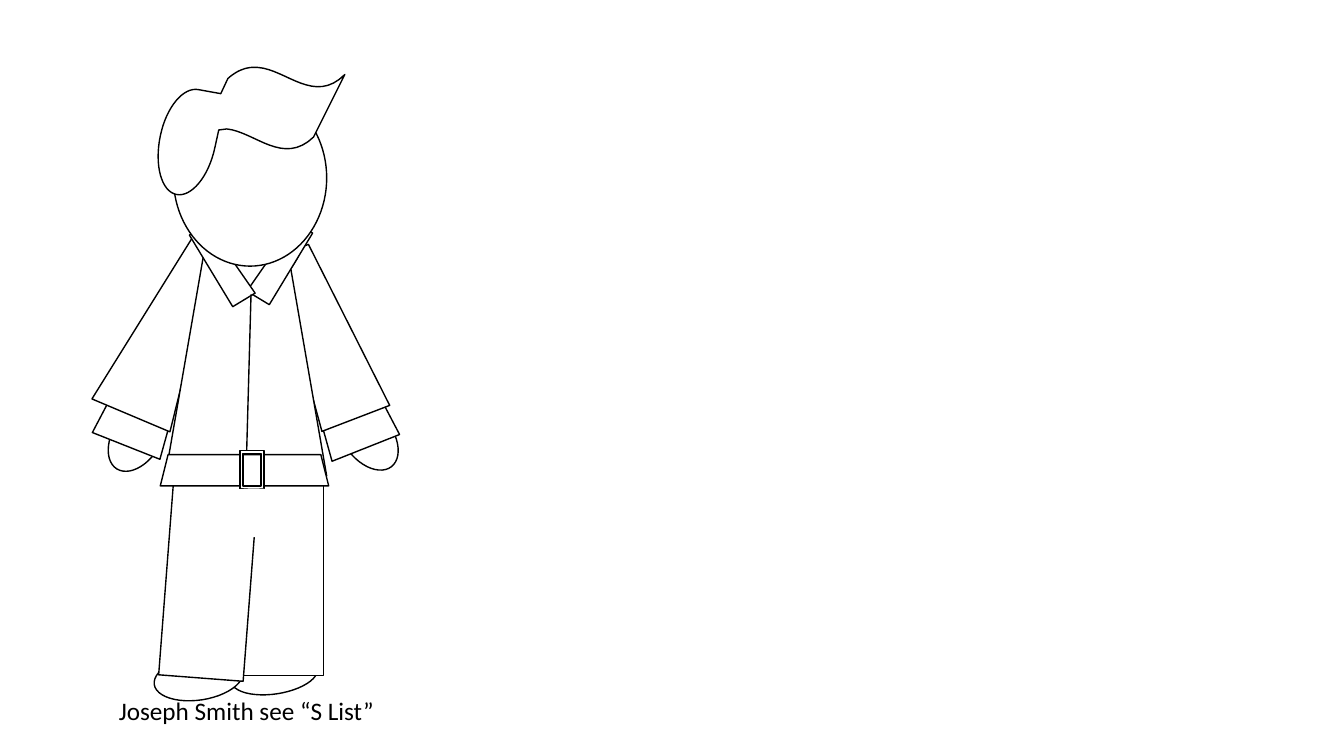
"""Draw an outlined figure with swept hair, shirt, belt and caption."""
from pptx import Presentation
from pptx.dml.color import RGBColor as Rgb
from pptx.enum.shapes import MSO_CONNECTOR as Connector, MSO_SHAPE as Shape
from pptx.oxml.ns import qn
from pptx.util import Pt
from lxml.etree import SubElement

SLIDE = (1333, 750)
PX = 9144
CURVE_STEPS = 16
THEME = {"ink": Rgb(0, 0, 0), "paper": Rgb(255, 255, 255), "outline": Pt(1),
         "font": "Calibri", "caption": Pt(18)}

CAPTION = "Joseph Smith see “S List”"
CAPTION_BOX = (108, 685, 275, 40)

OVAL, TAPER, COLLAR = Shape.OVAL, Shape.TRAPEZOID, Shape.FLOWCHART_MANUAL_INPUT

BODY = [
    ("right hand", OVAL, (341, 395, 48, 76), {"rotation": 322.3}),
    ("left hand", OVAL, (112, 395, 48, 76), {"rotation": 32.2}),
    ("left cuff", TAPER, (103, 370, 72, 75), {"rotation": 21.6, "flip": "H", "taper": 0.11}),
    ("right cuff", TAPER, (313, 372, 72, 75), {"rotation": 338.4, "taper": 0.11}),
    ("right shoe", OVAL, (253, 626, 38, 87), {"rotation": 81.4}),
    ("left shoe", OVAL, (175, 628, 44, 89), {"rotation": 81.4}),
    ("right leg", TAPER, (227, 455, 94, 215), {"taper": 0}),
    ("left leg", TAPER, (166, 445, 84, 228), {"rotation": 4.4, "taper": 0}),
    ("left sleeve", TAPER, (127, 219, 84, 201), {"rotation": 22.9, "taper": 0.38}),
    ("right sleeve", TAPER, (285, 243, 72, 178), {"rotation": 339}),
    ("shirt", TAPER, (164, 241, 160, 231), {}),
    ("neck", OVAL, (197, 112, 111, 175), {}),
    ("right collar", COLLAR, (236, 247, 83, 26), {"rotation": 121.2, "flip": "V"}),
    ("left collar", COLLAR, (179, 249, 83, 26), {"rotation": 238.8, "flip": "HV"}),
    ("head", OVAL, (172, 89, 152, 175), {}),
]
SHIRT_OPENING = (249, 292, 244, 472)
BELT = [
    ("strap", TAPER, (159, 451, 167, 31), {}),
    ("buckle", Shape.FRAME, (238, 447, 24, 38), {}),
]
HAIR_START = (256, 67)
HAIR = [
    [(284, 69), (312, 104), (342, 74)],
    [(311, 136)],
    [(281, 165), (253, 131), (225, 128)],
    [(217, 129)],
    [(213, 147)],
    [(207, 175), (190, 196), (175, 193)],
    [(160, 190), (153, 164), (159, 135)],
    [(165, 106), (182, 86), (197, 89)],
    [(219, 93)],
    [(226, 78)],
    [(236, 69), (246, 66), (256, 67)],
]
TROUSER_FRONT = [
    ("waist", OVAL, (217, 452, 49, 115), {"rotation": 264.6, "outlined": False}),
]


def emu(lengths):
    return [round(length * PX) for length in lengths]


def apply(target, values):
    for name, value in values.items():
        setattr(target, name, value)


def paint(part, outlined=True):
    part.shadow.inherit = False
    part.fill.solid()
    part.fill.fore_color.rgb = THEME["paper"]
    if outlined:
        ink(part.line)
    else:
        part.line.fill.background()


def ink(line):
    line.fill.solid()
    apply(line.fill.fore_color, {"rgb": THEME["ink"]})
    apply(line, {"width": THEME["outline"]})


def draw_parts(figure, parts):
    for _, kind, box, look in parts:
        part = figure.add_shape(kind, *emu(box))
        part.rotation = look.get("rotation", 0)
        if "taper" in look:
            part.adjustments[0] = look["taper"]
        for axis in look.get("flip", ""):
            part._element.spPr.find(qn("a:xfrm")).set("flip" + axis, "1")
        paint(part, look.get("outlined", True))


def draw_opening(figure):
    opening = figure.add_connector(Connector.STRAIGHT, *emu(SHIRT_OPENING))
    ink(opening.line)
    SubElement(opening._element.spPr, qn("a:effectLst"))


def bezier(start, first, second, end, t):
    weights = ((1 - t) ** 3, 3 * t * (1 - t) ** 2, 3 * t ** 2 * (1 - t), t ** 3)
    return [sum(w * v for w, v in zip(weights, axis))
            for axis in zip(start, first, second, end)]


def draw_hair(figure):
    outline, here = [], HAIR_START
    for strand in HAIR:
        if len(strand) == 3:
            outline += [bezier(here, *strand, step / CURVE_STEPS)
                        for step in range(1, CURVE_STEPS + 1)]
        else:
            outline += strand
        here = strand[-1]
    builder = figure.build_freeform(*emu(HAIR_START))
    builder.add_line_segments([emu(point) for point in outline], close=True)
    paint(builder.convert_to_shape())


def draw_caption(slide):
    frame = slide.shapes.add_textbox(*emu(CAPTION_BOX)).text_frame
    frame.word_wrap = False
    run = frame.paragraphs[0].add_run()
    run.text = CAPTION
    apply(run.font, {"name": THEME["font"], "size": THEME["caption"]})
    run.font.color.rgb = THEME["ink"]


def main():
    deck = Presentation()
    deck.slide_width, deck.slide_height = emu(SLIDE)
    slide = deck.slides.add_slide(deck.slide_layouts[6])
    figure = slide.shapes.add_group_shape().shapes
    draw_parts(figure, BODY)
    draw_opening(figure)
    draw_parts(figure, BELT)
    draw_hair(figure)
    draw_parts(figure, TROUSER_FRONT)
    draw_caption(slide)
    deck.save("out.pptx")


if __name__ == "__main__":
    main()
